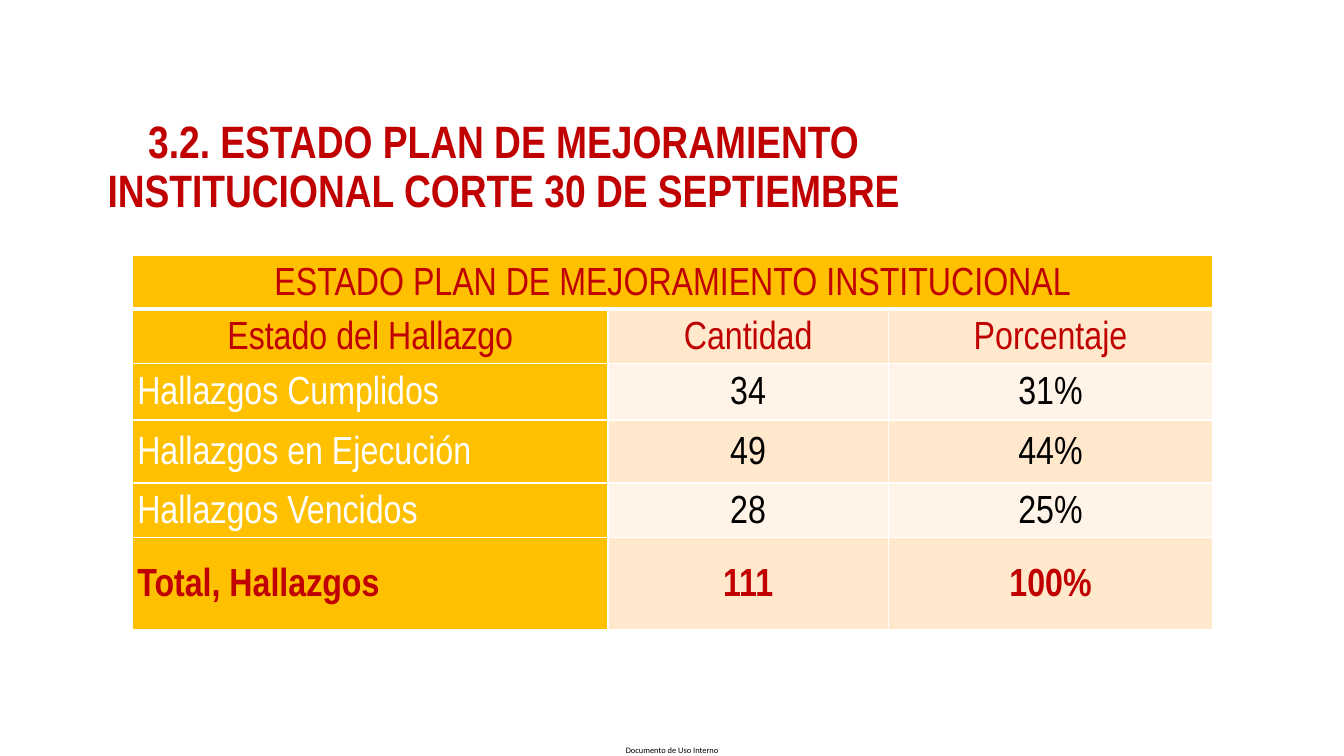
"""Build the slide on the state of the institutional improvement plan."""
from dataclasses import dataclass

from lxml import etree
from pptx import Presentation
from pptx import util as u
from pptx.dml.color import RGBColor
from pptx.enum import text
from pptx.oxml.ns import qn

PX = 9525
COLS = [453, 267, 309]
ROWS = [48, 50, 54, 60, 48, 88]
TABLE_TITLE = "ESTADO PLAN DE MEJORAMIENTO INSTITUCIONAL"
DATA = [
    [TABLE_TITLE, "", ""],
    ["Estado del Hallazgo", "Cantidad", "Porcentaje"],
    ["Hallazgos Cumplidos", "34", "31%"],
    ["Hallazgos en Ejecución", "49", "44%"],
    ["Hallazgos Vencidos", "28", "25%"],
    ["Total, Hallazgos", "111", "100%"],
]


@dataclass(frozen=True)
class Theme:
    """Colours, fonts and type sizes."""
    red: str = "C00000"
    gold: str = "FFC000"
    peach: str = "FFE8CC"
    cream: str = "FFF4E7"
    white: str = "FFFFFF"
    black: str = "000000"
    font: str = "Arial Narrow"
    footer_font: str = "Calibri"
    title_size: float = 32.4
    table_size: float = 28
    footer_size: float = 6


T = Theme()


def px(*lengths):
    """Turn pixel lengths into EMU."""
    return [u.Emu(n * PX) for n in lengths]


def style(p, size, color, font=T.font, bold=False, align=text.PP_ALIGN.CENTER):
    """Format a paragraph and its runs."""
    p.alignment = align
    for r in p.runs:
        r.font.name, r.font.size, r.font.bold = font, u.Pt(size), bold
        r.font.color.rgb = RGBColor.from_string(color)


def add_title(s, words, box):
    """Add the bold title, resting on the bottom of its box."""
    tf = s.shapes.add_textbox(*px(*box)).text_frame
    tf.word_wrap = True
    tf.vertical_anchor = text.MSO_ANCHOR.BOTTOM
    tf.text = words
    p = tf.paragraphs[0]
    p.line_spacing = 0.9
    style(p, T.title_size, T.red, bold=True)


def add_footer(s, words, box):
    """Add the small label at the foot of the slide."""
    tf = s.shapes.add_textbox(*px(*box)).text_frame
    tf.margin_left = tf.margin_top = tf.margin_right = tf.margin_bottom = 0
    tf.word_wrap = False
    tf.text = words
    style(tf.paragraphs[0], T.footer_size, T.black, T.footer_font,
          align=text.PP_ALIGN.LEFT)


def add_borders(cell, bottom):
    """Draw white lines around a cell, with the bottom width in points."""
    tc_pr = cell._tc.get_or_add_tcPr()
    widths = {"lnL": 1, "lnR": 1, "lnT": 1, "lnB": bottom}
    for i, (edge, width) in enumerate(widths.items()):
        ln = etree.Element(qn(f"a:{edge}"), w=str(u.Pt(width)))
        fill = etree.SubElement(ln, qn("a:solidFill"))
        etree.SubElement(fill, qn("a:srgbClr"), val=T.white)
        tc_pr.insert(i, ln)


def format_cell(cell, row, col):
    """Set the fill, lines and text of a cell by its place in the table."""
    last = len(DATA) - 1
    label = col == 0 and row > 1
    if row == 0 or col == 0:
        fill = T.gold
    else:
        fill = T.peach if row % 2 else T.cream
    if row == last:
        fill = T.gold if col == 0 else T.peach
    if row in (0, 1, last):
        color = T.red
    else:
        color = T.white if label else T.black
    cell.fill.solid()
    cell.fill.fore_color.rgb = RGBColor.from_string(fill)
    cell.margin_left = cell.margin_right = u.Inches(0.05)
    cell.margin_top = cell.margin_bottom = 0
    cell.vertical_anchor = text.MSO_ANCHOR.MIDDLE
    p = cell.text_frame.paragraphs[0]
    p.text = DATA[row][col]
    p.line_spacing, p.space_after = 1.15, u.Pt(8)
    style(p, T.table_size, color, bold=row == last,
          align=text.PP_ALIGN.LEFT if label else text.PP_ALIGN.CENTER)
    add_borders(cell, 3 if row == 0 else 1)


def add_findings_table(s, left, top):
    """Add the table of findings by state."""
    box = px(left, top, sum(COLS), sum(ROWS))
    table = s.shapes.add_table(len(ROWS), len(COLS), *box).table
    table.first_row = table.horz_banding = False
    for column, width in zip(table.columns, px(*COLS)):
        column.width = width
    for line, height in zip(table.rows, px(*ROWS)):
        line.height = height
    table.cell(0, 0).merge(table.cell(0, len(COLS) - 1))
    for row in range(len(ROWS)):
        for col in range(len(COLS)):
            cell = table.cell(row, col)
            if not cell.is_spanned:
                format_cell(cell, row, col)


def main():
    """Build and save the slide."""
    prs = Presentation()
    prs.slide_width, prs.slide_height = px(1280, 720)
    s = prs.slides.add_slide(prs.slide_layouts[6])
    add_footer(s, "Documento de Uso Interno", (596, 710, 90, 10))
    add_title(s, "3.2. ESTADO PLAN DE MEJORAMIENTO INSTITUCIONAL "
                 "CORTE 30 DE SEPTIEMBRE", (0, 104, 960, 108))
    add_findings_table(s, 126, 243)
    prs.save("out.pptx")


if __name__ == "__main__":
    main()
